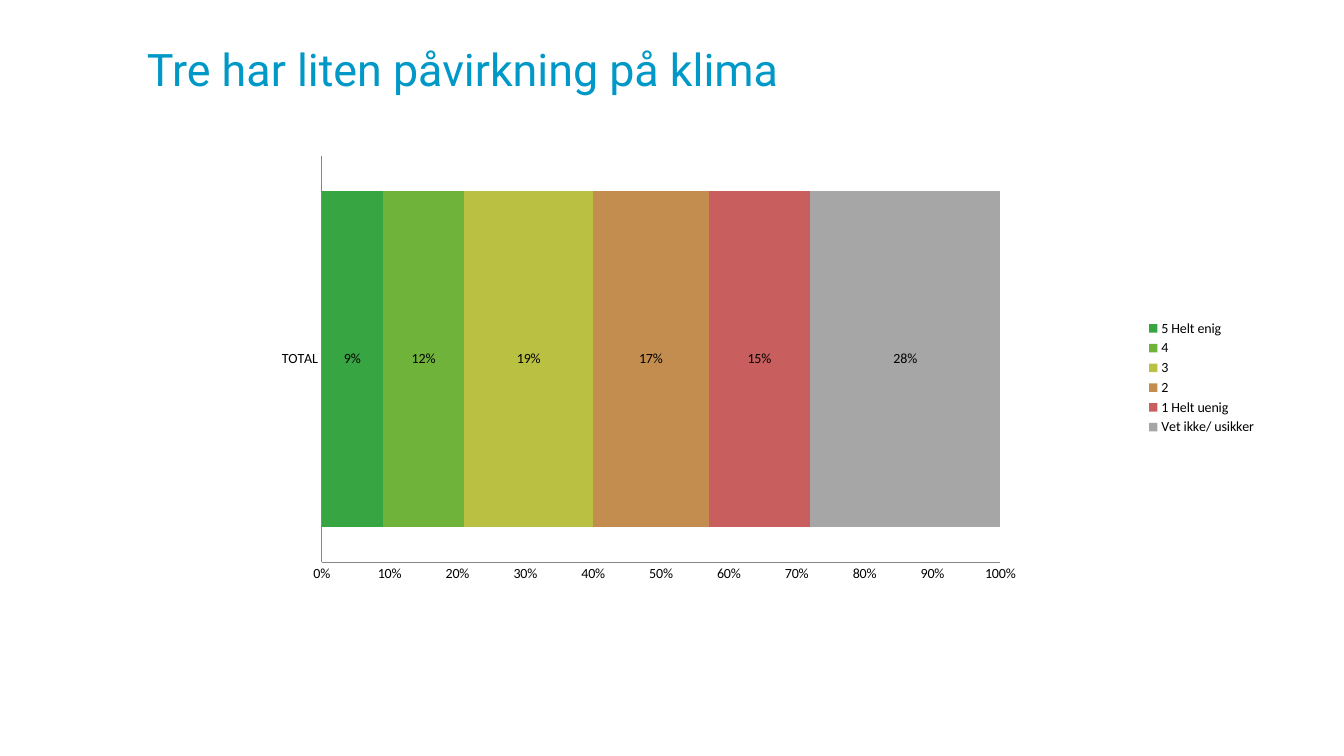
import dataclasses

import lxml.etree
import pptx
import pptx.chart.data
import pptx.dml.color
import pptx.enum.chart
import pptx.enum.text
import pptx.oxml.ns
import pptx.util

Cm = pptx.util.Cm
Pt = pptx.util.Pt


@dataclasses.dataclass(frozen=True)
class Theme:
    """Colours, fonts and type sizes of the slide."""
    title_font: str = "Roboto"
    title_size: float = 32
    title_color: str = "0098C6"
    chart_font: str = "Calibri"
    chart_size: float = 10
    chart_color: str = "000000"
    axis_color: str = "868686"


THEME = Theme()
ANSWERS = [
    ("5 Helt enig", 0.09, "37A541"),
    ("4", 0.12, "6FB33B"),
    ("3", 0.19, "BAC042"),
    ("2", 0.17, "C48D50"),
    ("1 Helt uenig", 0.15, "C95E5E"),
    ("Vet ikke/ usikker", 0.28, "A6A6A6"),
]
PLOT_AREA = {"x": 0.206, "y": 0.07, "w": 0.57, "h": 0.788}


def color(value):
    """Turn a hex value into a colour."""
    return pptx.dml.color.RGBColor.from_string(value)


def style_font(font, name, size, value):
    """Set the name, size and colour of a font."""
    font.name = name
    font.size = Pt(size)
    font.color.rgb = color(value)


def place_plot(chart, fractions):
    """Fix the inner plot area to fractions of the chart."""
    qn = pptx.oxml.ns.qn
    plot_area = chart.plots[0]._element.getparent()
    for old_layout in plot_area.findall(qn("c:layout")):
        plot_area.remove(old_layout)
    layout = lxml.etree.Element(qn("c:layout"))
    manual = lxml.etree.SubElement(layout, qn("c:manualLayout"))
    settings = [("layoutTarget", "inner"), ("xMode", "edge"), ("yMode", "edge")]
    for tag, value in settings + list(fractions.items()):
        lxml.etree.SubElement(manual, qn(f"c:{tag}")).set("val", str(value))
    plot_area.insert(0, layout)


def style_axis(axis):
    """Give an axis a thin line without ticks or gridlines."""
    axis.has_major_gridlines = False
    axis.major_tick_mark = pptx.enum.chart.XL_TICK_MARK.NONE
    axis.minor_tick_mark = pptx.enum.chart.XL_TICK_MARK.NONE
    axis.format.line.color.rgb = color(THEME.axis_color)
    axis.format.line.width = Pt(0.75)


def add_title(page, text, left, top, width, height):
    """Place the slide title in the given box."""
    title = page.shapes.title
    title.left, title.top, title.width, title.height = left, top, width, height
    frame = title.text_frame
    frame.text = text
    frame.vertical_anchor = pptx.enum.text.MSO_ANCHOR.MIDDLE
    para = frame.paragraphs[0]
    para.alignment = pptx.enum.text.PP_ALIGN.LEFT
    style_font(para.font, THEME.title_font, THEME.title_size, THEME.title_color)


def add_answer_chart(page, left, top, width, height):
    """Place the stacked bar of answers in the given box."""
    data = pptx.chart.data.CategoryChartData(number_format="0%")
    data.categories = ["TOTAL"]
    for name, share, _ in ANSWERS:
        data.add_series(name, [share])
    chart = page.shapes.add_chart(
        pptx.enum.chart.XL_CHART_TYPE.BAR_STACKED, left, top, width, height, data
    ).chart
    chart.has_title = False
    style_font(chart.font, THEME.chart_font, THEME.chart_size, THEME.chart_color)

    plot = chart.plots[0]
    plot.gap_width = 21
    plot.overlap = 100
    plot.vary_by_categories = False
    for series, (_, _, fill) in zip(plot.series, ANSWERS):
        series.format.fill.solid()
        series.format.fill.fore_color.rgb = color(fill)
        labels = series.data_labels
        labels.show_value = True
        labels.number_format = "0%"
        labels.number_format_is_linked = False
        labels.position = pptx.enum.chart.XL_LABEL_POSITION.CENTER

    style_axis(chart.category_axis)
    style_axis(chart.value_axis)
    chart.value_axis.minimum_scale = 0
    chart.value_axis.maximum_scale = 1
    chart.value_axis.major_unit = 0.1
    chart.value_axis.tick_labels.number_format = "0%"
    chart.value_axis.tick_labels.number_format_is_linked = False

    chart.has_legend = True
    chart.legend.position = pptx.enum.chart.XL_LEGEND_POSITION.RIGHT
    chart.legend.include_in_layout = False
    place_plot(chart, PLOT_AREA)


def main():
    """Build the slide and save it."""
    deck = pptx.Presentation()
    deck.slide_width, deck.slide_height = Cm(33.87), Cm(19.05)
    page = deck.slides.add_slide(deck.slide_layouts.get_by_name("Title Only"))
    add_title(page, "Tre har liten påvirkning på klima",
              Cm(3.45), Cm(0.15), Cm(28.7), Cm(3.18))
    add_answer_chart(page, Cm(1.93), Cm(3.02), Cm(30), Cm(13))
    deck.save("out.pptx")


if __name__ == "__main__":
    main()
